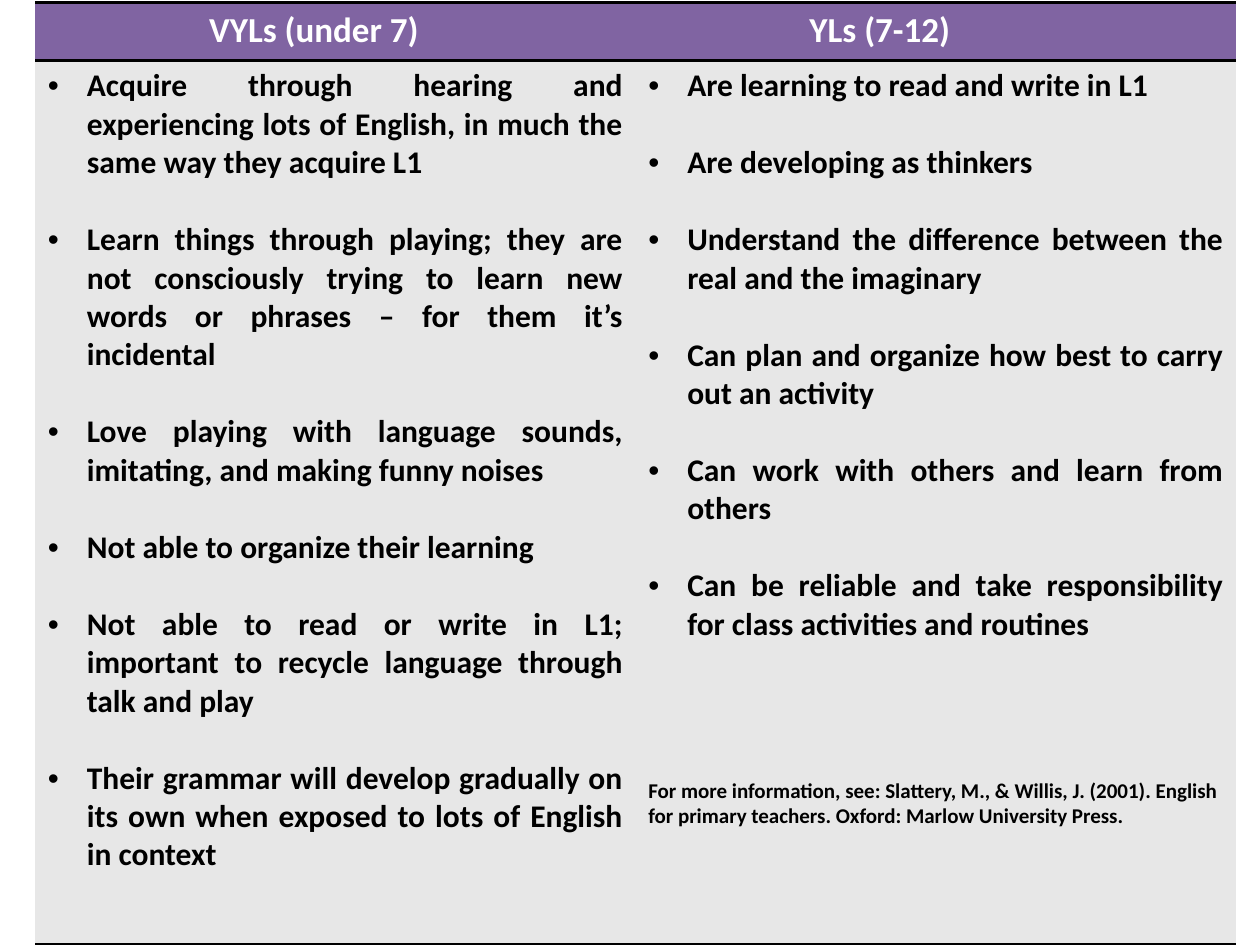
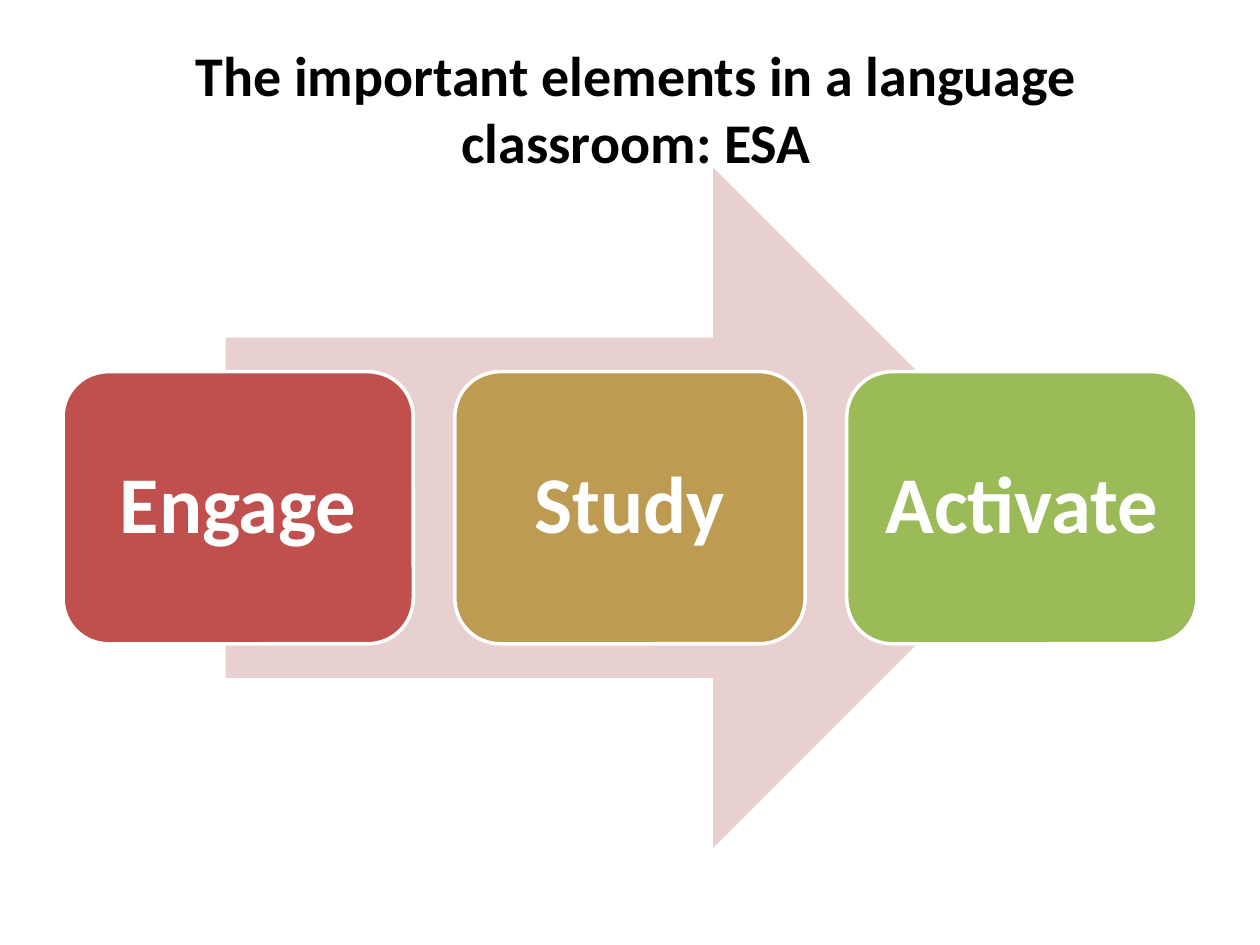
from dataclasses import dataclass

from lxml.etree import SubElement
from pptx import Presentation
from pptx.dml.color import RGBColor
from pptx.enum.shapes import MSO_SHAPE
from pptx.enum.text import MSO_ANCHOR, PP_ALIGN
from pptx.oxml.ns import qn
from pptx.slide import Slide
from pptx.table import _Cell
from pptx.text.text import TextFrame, _Paragraph
from pptx.util import Inches, Pt


@dataclass(frozen=True)
class Theme:
    font: str = "Calibri"
    black: str = "000000"
    white: str = "FFFFFF"
    header: str = "8064A2"
    body: str = "E7E7E7"
    arrow: str = "E8D0D0"
    title_size: int = 32
    header_size: int = 20
    body_size: int = 18
    source_size: int = 12
    stage_size: int = 46
    line_width: int = 2


@dataclass(frozen=True)
class Learners:
    heading: str
    heading_right_margin: float
    traits: tuple[str, ...]
    source: str = ""


@dataclass(frozen=True)
class Stage:
    name: str
    color: str


THEME = Theme()
BULLET_GAP = 22
SOURCE_GAP = 77
BULLET_INDENT = 0.31

LEARNERS = (
    Learners("VYLs (under 7)", 0.44, (
        "Acquire through hearing and experiencing lots of English, in much the same way they acquire L1",
        "Learn things through playing; they are not consciously trying to learn new words or phrases – for them it’s incidental",
        "Love playing with language sounds, imitating, and making funny noises",
        "Not able to organize their learning",
        "Not able to read or write in L1; important to recycle language through talk and play",
        "Their grammar will develop gradually on its own when exposed to lots of English in context",
    )),
    Learners("YLs (7-12)", 0.99, (
        "Are learning to read and write in L1",
        "Are developing as thinkers",
        "Understand the difference between the real and the imaginary",
        "Can plan and organize how best to carry out an activity",
        "Can work with others and learn from others",
        "Can be reliable and take responsibility for class activities and routines",
    ), "For more information, see: Slattery, M., & Willis, J. (2001). English for primary teachers. "
       "Oxford: Marlow University Press."),
)

STAGES = (Stage("Engage", "C0504D"), Stage("Study", "BD9B53"), Stage("Activate", "9BBB59"))


def write(frame: TextFrame, text: str, *, size: int, color: str = THEME.black,
          align: PP_ALIGN = PP_ALIGN.CENTER, before: int = 0,
          line_spacing: float = 1.0) -> _Paragraph:
    para = frame.paragraphs[0] if not frame.text else frame.add_paragraph()
    para.alignment = align
    para.line_spacing = line_spacing
    para.space_before = Pt(before)
    span = para.add_run()
    span.text = text
    span.font.name = THEME.font
    span.font.size = Pt(size)
    span.font.bold = True
    span.font.color.rgb = RGBColor.from_string(color)
    return para


def add_bullet(para: _Paragraph) -> None:
    properties = para._p.get_or_add_pPr()
    properties.set("marL", str(Inches(BULLET_INDENT)))
    properties.set("indent", str(-Inches(BULLET_INDENT)))
    SubElement(properties, qn("a:buFont"), typeface="Arial")
    SubElement(properties, qn("a:buChar"), char="•")


def style_cell(cell: _Cell, fill: str) -> None:
    properties = cell._tc.get_or_add_tcPr()
    for side in ("L", "R"):
        SubElement(SubElement(properties, qn(f"a:ln{side}"), w="0"), qn("a:noFill"))
    for side in ("T", "B"):
        line = SubElement(properties, qn(f"a:ln{side}"), w=str(Pt(THEME.line_width)))
        SubElement(SubElement(line, qn("a:solidFill")), qn("a:srgbClr"), val=THEME.black)
    cell.fill.solid()
    cell.fill.fore_color.rgb = RGBColor.from_string(fill)


def add_learner_table(page: Slide) -> None:
    table = page.shapes.add_table(2, len(LEARNERS), Inches(0.28), Inches(0.02),
                                  Inches(9.53), Inches(7.48)).table
    table.horz_banding = False
    table.rows[0].height = Inches(0.46)
    table.rows[1].height = Inches(7.02)
    for column, learners in enumerate(LEARNERS):
        heading, body = table.cell(0, column), table.cell(1, column)
        style_cell(heading, THEME.header)
        style_cell(body, THEME.body)
        heading.margin_right = Inches(learners.heading_right_margin)
        write(heading.text_frame, learners.heading, size=THEME.header_size, color=THEME.white)
        for index, trait in enumerate(learners.traits):
            add_bullet(write(body.text_frame, trait, size=THEME.body_size,
                             align=PP_ALIGN.JUSTIFY, before=BULLET_GAP if index else 0))
        if learners.source:
            write(body.text_frame, learners.source, size=THEME.source_size,
                  align=PP_ALIGN.LEFT, before=SOURCE_GAP)


def add_title(page: Slide, text: str) -> None:
    title = page.shapes.title
    title.left, title.top = Inches(0.55), Inches(0.23)
    title.width, title.height = Inches(9), Inches(1.25)
    title.text_frame.vertical_anchor = MSO_ANCHOR.MIDDLE
    write(title.text_frame, text, size=THEME.title_size)


def add_arrow(page: Slide) -> None:
    arrow = page.shapes.add_shape(MSO_SHAPE.RIGHT_ARROW, Inches(1.79), Inches(1.33),
                                  Inches(6.57), Inches(5.4))
    arrow.shadow.inherit = False
    arrow.fill.solid()
    arrow.fill.fore_color.rgb = RGBColor.from_string(THEME.arrow)
    arrow.line.fill.background()


def add_stage(page: Slide, stage: Stage, left: float) -> None:
    box = page.shapes.add_shape(MSO_SHAPE.ROUNDED_RECTANGLE, Inches(left), Inches(2.95),
                                Inches(2.78), Inches(2.16))
    box.shadow.inherit = False
    box.fill.solid()
    box.fill.fore_color.rgb = RGBColor.from_string(stage.color)
    box.line.color.rgb = RGBColor.from_string(THEME.white)
    box.line.width = Pt(THEME.line_width)
    frame = box.text_frame
    frame.word_wrap = True
    frame.vertical_anchor = MSO_ANCHOR.MIDDLE
    frame.margin_left = frame.margin_right = Inches(0.15)
    write(frame, stage.name, size=THEME.stage_size, color=THEME.white, line_spacing=0.9)


def main() -> None:
    deck = Presentation()
    deck.slide_width, deck.slide_height = Inches(10), Inches(7.5)
    title_only, blank = deck.slide_layouts[5], deck.slide_layouts[6]

    add_learner_table(deck.slides.add_slide(blank))

    page = deck.slides.add_slide(title_only)
    add_title(page, "The important elements in a language classroom: ESA")
    add_arrow(page)
    for index, stage in enumerate(STAGES):
        add_stage(page, stage, 0.5 + 3.11 * index)

    deck.save("out.pptx")


if __name__ == "__main__":
    main()
